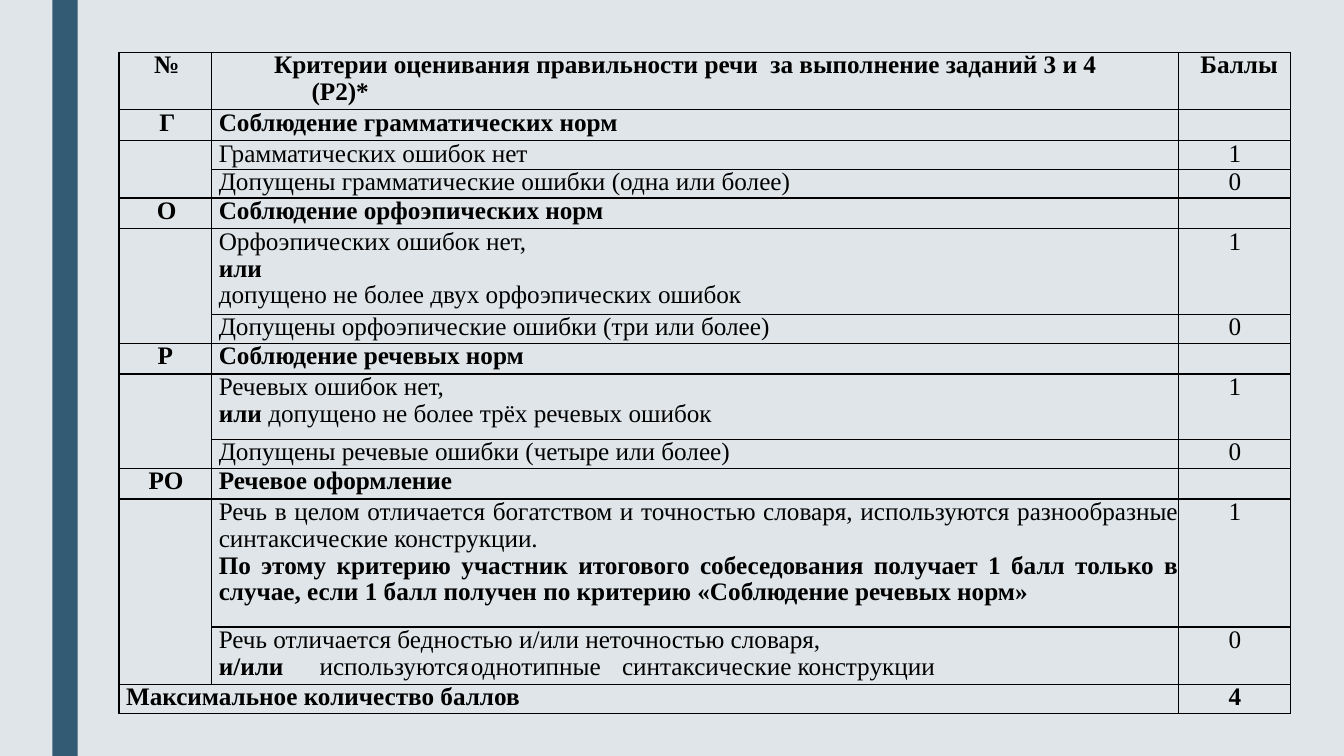
from lxml.etree import SubElement
from pptx import Presentation
from pptx.dml.color import RGBColor
from pptx.enum.shapes import MSO_SHAPE
from pptx.enum.text import PP_ALIGN
from pptx.oxml.ns import qn
from pptx.util import Inches, Pt

BLACK = RGBColor(0x00, 0x00, 0x00)
TEAL = RGBColor(0x33, 0x5B, 0x74)
PALE = RGBColor(0xDF, 0xE5, 0xE8)
FONT = "Times New Roman"
WIDE, HIGH = 13.33, 7.5
LINE = 0.285
COLS = [0.92, 9.59, 1.11]
TABS = [0.86, 2.31, 3.6]
SPANS = [(2, 0, 3, 0), (5, 0, 6, 0), (8, 0, 9, 0), (11, 0, 12, 0), (13, 0, 13, 1)]
TALL = {0: 0.57, 5: 0.85, 8: 0.65, 11: 1.27, 12: 0.57}
INSET = {"№": 0.32, "Г": 0.36, "О": 0.35, "РО": 0.28}

ROWS = [
    ("№", ["*Критерии оценивания правильности речи  за выполнение заданий 3 и 4 (Р2)*"], "*Баллы"),
    ("Г", ["*Соблюдение грамматических норм"], ""),
    ("", ["Грамматических ошибок нет"], "1"),
    ("", ["Допущены грамматические ошибки (одна или более)"], "0"),
    ("О", ["*Соблюдение орфоэпических норм"], ""),
    ("", ["Орфоэпических ошибок нет,", "*или",
          "допущено не более двух орфоэпических ошибок"], "1"),
    ("", ["Допущены орфоэпические ошибки (три или более)"], "0"),
    ("Р", ["*Соблюдение речевых норм"], ""),
    ("", ["Речевых ошибок нет,", "*или |допущено не более трёх речевых ошибок"], "1"),
    ("", ["Допущены речевые ошибки (четыре или более)"], "0"),
    ("РО", ["*Речевое оформление"], ""),
    ("", ["Речь в целом отличается богатством и точностью словаря, "
          "используются разнообразные синтаксические конструкции.",
          "*По этому критерию участник итогового собеседования получает 1 балл "
          "только в случае, если 1 балл получен по критерию «Соблюдение речевых норм»"], "1"),
    ("", ["Речь отличается бедностью и/или неточностью словаря,",
          "*и/или\t|используются\tоднотипные\t|синтаксические конструкции"], "0"),
    ("*Максимальное количество баллов", [], "*4"),
]


def indent(para, left=0, first=0, right=0):
    """Set the paragraph's indents in inches."""
    props = para._p.get_or_add_pPr()
    for name, size in (("marL", left), ("indent", first), ("marR", right)):
        props.set(name, str(Inches(size)))


def add_tabs(para):
    """Give the paragraph its tab stops."""
    stops = SubElement(para._p.get_or_add_pPr(), qn("a:tabLst"))
    for stop in TABS:
        SubElement(stops, qn("a:tab"), pos=str(Inches(stop)), algn="l")


def write(para, text, align=PP_ALIGN.LEFT):
    """Write runs split at bars, bold where a star leads."""
    para.alignment = align
    para.line_spacing = 0.96
    for part in text.split("|") if text else []:
        run = para.add_run()
        bold = part.startswith("*")
        run.text = part[1:] if bold else part
        run.font.name, run.font.size, run.font.bold = FONT, Pt(18), bold
        run.font.color.rgb = BLACK
    if "\t" in text:
        add_tabs(para)


def frame(cell):
    """Clear the cell's fill and margins and draw its borders."""
    cell.margin_left = cell.margin_right = cell.margin_top = cell.margin_bottom = 0
    props = cell._tc.get_or_add_tcPr()
    for side in "LRTB":
        edge = SubElement(props, qn(f"a:ln{side}"), w=str(Pt(1)))
        fill = SubElement(edge, qn("a:solidFill"))
        SubElement(fill, qn("a:srgbClr"), val=str(BLACK))
    cell.fill.background()


def fill_code(cell, code):
    """Write a criterion's letter, or the total's label."""
    para = cell.text_frame.paragraphs[0]
    if code.startswith("*"):
        write(para, code)
        indent(para, 0.07)
    elif code in INSET:
        write(para, "*" + code, PP_ALIGN.RIGHT)
        indent(para, right=INSET[code])
    else:
        write(para, code and "*" + code, PP_ALIGN.CENTER)


def fill_rule(cell, lines, head):
    """Write the lines of a criterion."""
    text = cell.text_frame
    align = PP_ALIGN.JUSTIFY if any(len(line) > 100 for line in lines) else PP_ALIGN.LEFT
    for num, line in enumerate(lines):
        para = text.add_paragraph() if num else text.paragraphs[0]
        write(para, line, align)
        if head:
            indent(para, 0.99, -0.37, 0.4)
        else:
            indent(para, 0.07)


def add_grid(slide, left, top):
    """Place the table of criteria at the given corner."""
    sizes = [TALL.get(num, LINE) for num in range(len(ROWS))]
    table = slide.shapes.add_table(
        len(ROWS), len(COLS), Inches(left), Inches(top),
        Inches(sum(COLS)), Inches(sum(sizes))).table
    table.first_row = table.horz_banding = False
    for col, size in zip(table.columns, COLS):
        col.width = Inches(size)
    for num, (code, lines, score) in enumerate(ROWS):
        table.rows[num].height = Inches(sizes[num])
        cells = [table.cell(num, col) for col in range(len(COLS))]
        for cell in cells:
            frame(cell)
        fill_code(cells[0], code)
        fill_rule(cells[1], lines, num == 0)
        mark = cells[2].text_frame.paragraphs[0]
        write(mark, score, PP_ALIGN.CENTER)
        indent(mark, 0.01 if num else 0.09)
    for row, col, last, end in SPANS:
        table.cell(row, col).merge(table.cell(last, end))


def add_rail(slide, left, width):
    """Draw the upright band over the slide's full height."""
    rail = slide.shapes.add_shape(
        MSO_SHAPE.RECTANGLE, Inches(left), 0, Inches(width), Inches(HIGH))
    rail.shadow.inherit = False
    rail.fill.solid()
    rail.fill.fore_color.rgb = TEAL
    rail.line.fill.background()


def main():
    """Build and save the slide."""
    deck = Presentation()
    deck.slide_width, deck.slide_height = Inches(WIDE), Inches(HIGH)
    slide = deck.slides.add_slide(deck.slide_layouts[6])
    slide.background.fill.solid()
    slide.background.fill.fore_color.rgb = PALE
    add_rail(slide, 0.52, 0.25)
    add_grid(slide, 1.18, 0.52)
    deck.save("out.pptx")


if __name__ == "__main__":
    main()
